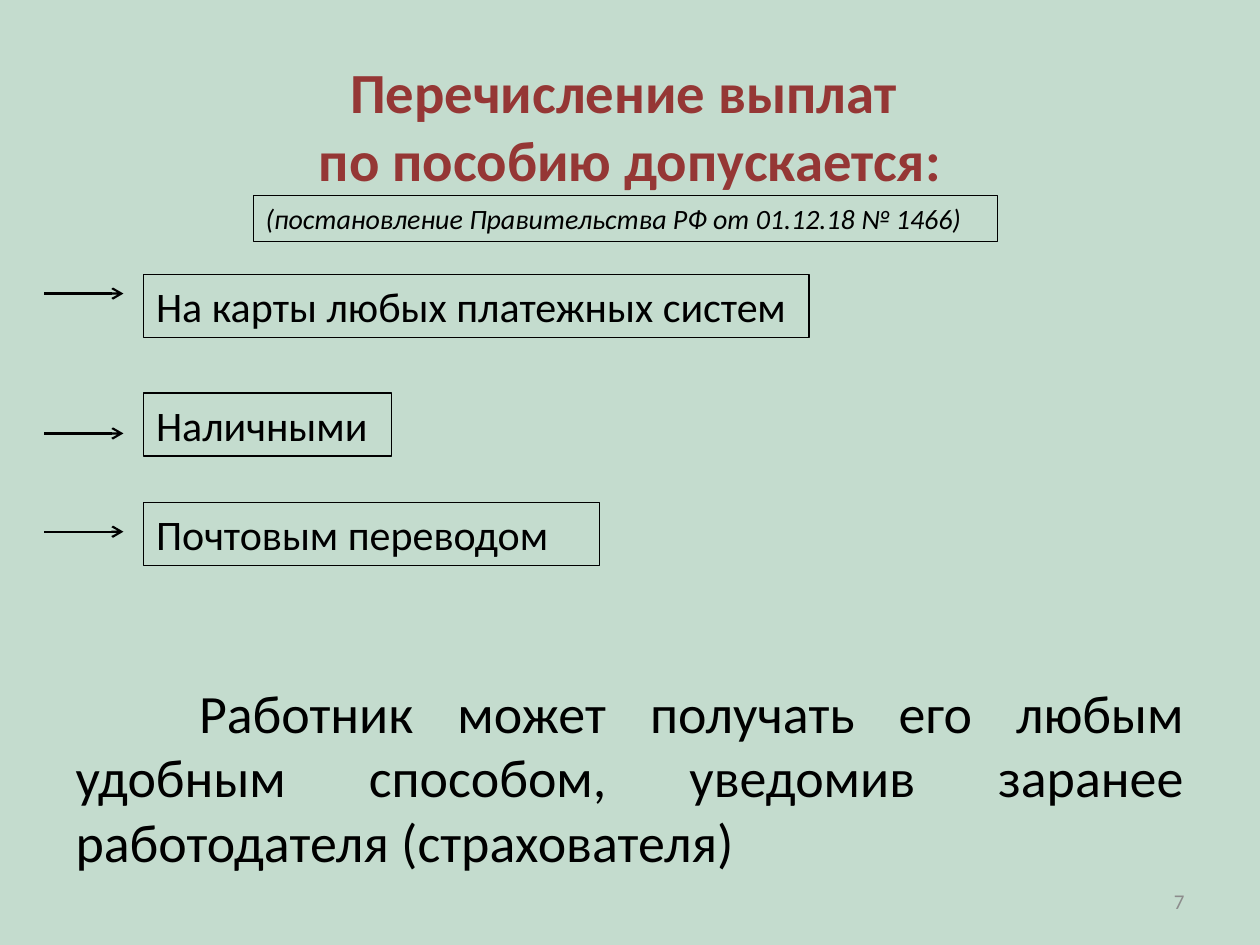
from pptx import Presentation
from pptx.dml.color import RGBColor
from pptx.enum.shapes import MSO_CONNECTOR as CONNECTOR, MSO_SHAPE as SHAPE
from pptx.enum.text import MSO_ANCHOR as ANCHOR, MSO_AUTO_SIZE as AUTO_SIZE, PP_ALIGN as ALIGN
from pptx.oxml.ns import qn
from pptx.util import Inches, Pt
from lxml.etree import SubElement

MINT = RGBColor(0xC4, 0xDC, 0xCE)
BLACK = RGBColor(0, 0, 0)
MAROON = RGBColor(0x95, 0x37, 0x35)
GRAY = RGBColor(0x8C, 0x8C, 0x8C)

# Text, box top, box width, arrow height
PAYMENT_WAYS = [
    ("На карты любых платежных систем", 2.18, 5.28, 2.33),
    ("Наличными", 3.12, 1.97, 3.44),
    ("Почтовым переводом", 3.99, 3.62, 4.22),
]


def place(shape, box):
    shape.left, shape.top, shape.width, shape.height = map(Inches, box)


def write(shape, text, size, color=BLACK, bold=False, italic=False,
          align=ALIGN.LEFT, anchor=ANCHOR.TOP, top=0.05, bottom=0.05):
    frame = shape.text_frame
    frame.word_wrap = True
    frame.auto_size = AUTO_SIZE.NONE
    frame.vertical_anchor = anchor
    frame.margin_top, frame.margin_bottom = Inches(top), Inches(bottom)
    frame.text = text
    paragraph = frame.paragraphs[0]
    paragraph.alignment = align
    for run in paragraph.runs:
        font = run.font
        font.name, font.size = "Calibri", Pt(size)
        font.bold, font.italic = bold, italic
        font.color.rgb = color
    return paragraph


def add_heading(slide, box):
    heading = slide.shapes.title
    place(heading, box)
    write(heading, "Перечисление выплат \vпо пособию допускается:", 32.4, MAROON,
          bold=True, align=ALIGN.CENTER, anchor=ANCHOR.BOTTOM, bottom=0.02)


def add_framed_text(slide, box, text, size, italic=False):
    frame = slide.shapes.add_shape(SHAPE.RECTANGLE, *map(Inches, box))
    frame.shadow.inherit = False
    frame.fill.background()
    frame.line.color.rgb = BLACK
    frame.line.width = Pt(0.75)
    write(frame, text, size, italic=italic)


def add_arrow(slide, left, right, y):
    arrow = slide.shapes.add_connector(
        CONNECTOR.STRAIGHT, Inches(left), Inches(y), Inches(right), Inches(y))
    arrow.line.color.rgb = BLACK
    arrow.line.width = Pt(1.25)
    SubElement(arrow.line._get_or_add_ln(), qn("a:tailEnd"), type="arrow")
    SubElement(arrow._element.spPr, qn("a:effectLst"))


def add_payment_ways(slide, left, arrow_left, arrow_right):
    for text, top, width, arrow_y in PAYMENT_WAYS:
        add_framed_text(slide, (left, top, width, 0.5), text, 24)
        add_arrow(slide, arrow_left, arrow_right, arrow_y)


def add_conclusion(slide, box):
    conclusion = slide.placeholders[1]
    place(conclusion, box)
    paragraph = write(
        conclusion,
        "Работник может получать его любым удобным способом, "
        "уведомив заранее работодателя (страхователя)",
        30.8, align=ALIGN.JUSTIFY, top=0.54)
    paragraph.space_before = Pt(0)
    # First-line indent without a bullet
    properties = paragraph._p.get_or_add_pPr()
    properties.set("marL", "0")
    properties.set("indent", str(Inches(0.98)))
    SubElement(properties, qn("a:buNone"))


def add_page_number(slide, box):
    number = slide.shapes.add_textbox(*map(Inches, box))
    write(number, "7", 12, GRAY, align=ALIGN.RIGHT, anchor=ANCHOR.MIDDLE)


def main():
    deck = Presentation()
    deck.slide_width, deck.slide_height = Inches(10), Inches(7.5)
    slide = deck.slides.add_slide(deck.slide_layouts[1])
    slide.background.fill.solid()
    slide.background.fill.fore_color.rgb = MINT

    add_heading(slide, (0.5, 0.3, 9, 1.25))
    add_conclusion(slide, (0.5, 4.85, 9, 1.85))
    add_page_number(slide, (7.17, 6.95, 2.33, 0.4))
    add_payment_ways(slide, left=1.14, arrow_left=0.35, arrow_right=0.98)
    # Legal reference under the heading
    add_framed_text(slide, (2.01, 1.55, 5.91, 0.37),
                    "(постановление Правительства РФ от 01.12.18 № 1466)",
                    16, italic=True)
    deck.save("out.pptx")


if __name__ == "__main__":
    main()
